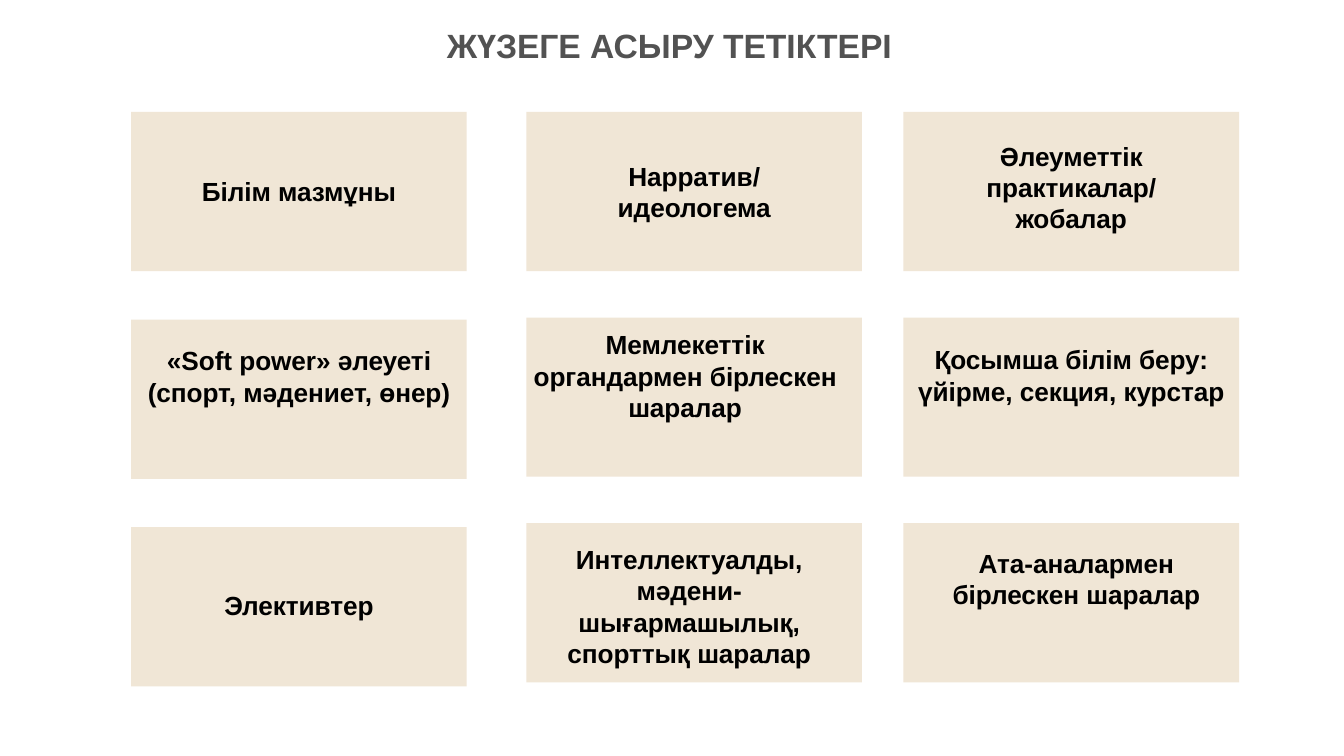
from pptx import Presentation
from pptx.dml.color import RGBColor
from pptx.enum.shapes import MSO_SHAPE
from pptx.enum.text import MSO_ANCHOR, MSO_AUTO_SIZE, PP_ALIGN
from pptx.util import Inches, Pt

RECTANGLE = MSO_SHAPE.RECTANGLE
TOP, MIDDLE = MSO_ANCHOR.TOP, MSO_ANCHOR.MIDDLE
GROW = MSO_AUTO_SIZE.SHAPE_TO_FIT_TEXT
FIXED = MSO_AUTO_SIZE.NONE
LEFT, CENTER = PP_ALIGN.LEFT, PP_ALIGN.CENTER

SLIDE_WIDTH, SLIDE_HEIGHT = 13.33, 7.5
CARD_WIDTH, CARD_HEIGHT = 3.33, 1.58
FIRST_ROW = 1.11
LABEL_SIZE = 18.67
SAND, BLACK, GREY = "F0E6D6", "000000", "525252"

# Each column: left edge, row pitch, cards as (lines, label box).
# A label box is (shift right, shift down, height); None centres the text in the card.
COLUMNS = [
    (1.3, 2.06, [
        (["Білім мазмұны"], None),
        (["«Soft power» әлеуеті (спорт, мәдениет, өнер)"], (0, 0.18, 1.18)),
        (["Элективтер"], (0, 0.55, 0.47)),
    ]),
    (5.22, 2.04, [
        (["Нарратив/", "идеологема"], None),
        (["Мемлекеттік органдармен бірлескен шаралар"], (-0.09, 0.04, 1.53)),
        (["Интеллектуалды, мәдени-шығармашылық, спорттық шаралар"],
         (-0.05, 0.13, 1.31)),
    ]),
    (8.96, 2.04, [
        (["Әлеуметтік практикалар/", "жобалар"], (0, 0.21, 1.18)),
        (["Қосымша білім беру: үйірме, секция, курстар"], (0, 0.19, 1.18)),
        (["Ата-аналармен бірлескен шаралар"], (0.05, 0.17, 1.18)),
    ]),
]


def color(value):
    return RGBColor.from_string(value)


def apply(target, values):
    for name, value in values.items():
        setattr(target, name, value)


def write(shape, lines, size, ink, align, margins, **frame_format):
    frame = shape.text_frame
    side, edge = margins
    apply(frame, {
        "margin_left": Inches(side), "margin_right": Inches(side),
        "margin_top": Inches(edge), "margin_bottom": Inches(edge),
        **frame_format,
    })
    for index, line in enumerate(lines):
        paragraph = frame.add_paragraph() if index else frame.paragraphs[0]
        paragraph.alignment = align
        run = paragraph.add_run()
        run.text = line
        apply(run.font, {"name": "Arial", "size": Pt(size), "bold": True})
        run.font.color.rgb = color(ink)


def add_label(shape, lines, anchor, auto_size):
    write(shape, lines, LABEL_SIZE, BLACK, CENTER, (0.13, 0.07),
          word_wrap=True, vertical_anchor=anchor, auto_size=auto_size)


def add_card(slide, left, top, lines, label_box):
    card = slide.shapes.add_shape(
        RECTANGLE, Inches(left), Inches(top),
        Inches(CARD_WIDTH), Inches(CARD_HEIGHT))
    card.shadow.inherit = False
    card.fill.solid()
    card.fill.fore_color.rgb = color(SAND)
    card.line.fill.background()
    if label_box is None:
        add_label(card, lines, MIDDLE, FIXED)
        return
    right, down, height = label_box
    label = slide.shapes.add_textbox(
        Inches(left + right), Inches(top + down),
        Inches(CARD_WIDTH), Inches(height))
    add_label(label, lines, TOP, GROW)


def add_title(slide, text):
    width = 4.66
    title = slide.shapes.add_textbox(
        Inches((SLIDE_WIDTH - width) / 2), Inches(0.2), Inches(width), Inches(0.5))
    write(title, [text], 24, GREY, LEFT, (0.1, 0.05),
          word_wrap=False, vertical_anchor=TOP, auto_size=GROW)


def main():
    deck = Presentation()
    apply(deck, {"slide_width": Inches(SLIDE_WIDTH),
                 "slide_height": Inches(SLIDE_HEIGHT)})
    slide = deck.slides.add_slide(deck.slide_layouts[6])
    for left, pitch, cards in COLUMNS:
        for row, (lines, label_box) in enumerate(cards):
            add_card(slide, left, FIRST_ROW + row * pitch, lines, label_box)
    add_title(slide, "ЖҮЗЕГЕ АСЫРУ ТЕТІКТЕРІ")
    deck.save("out.pptx")


if __name__ == "__main__":
    main()
